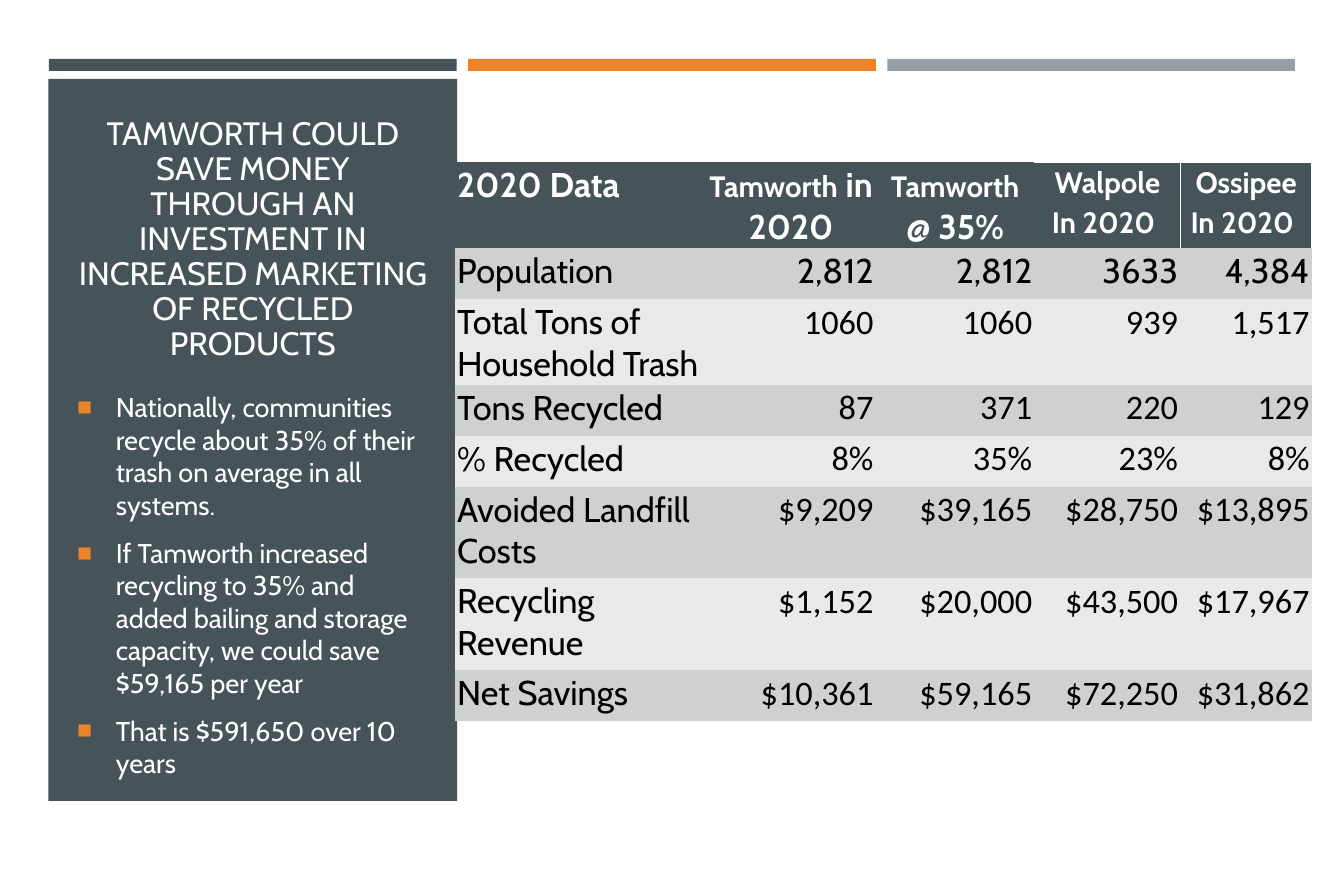
import pptx
import pptx.util
import pptx.dml.color
import pptx.enum.shapes
import pptx.enum.text
import pptx.oxml.ns
import lxml.etree

Pt = pptx.util.Pt
ALIGN = pptx.enum.text.PP_ALIGN
ANCHOR = pptx.enum.text.MSO_ANCHOR
DARK, ORANGE, GRAY, WHITE, BLACK = "465359", "ED8428", "969FA7", "FFFFFF", "000000"
BANDS = ("CFD1D1", "E9E9EA")

TITLE = ("TAMWORTH COULD SAVE MONEY THROUGH AN INVESTMENT IN "
         "INCREASED MARKETING OF RECYCLED PRODUCTS")
POINTS = [
    "Nationally, communities recycle about 35% of their trash on average in all systems.",
    "If Tamworth increased recycling to 35% and added bailing and storage capacity, "
    "we could save $59,165 per year",
    "That is $591,650 over 10 years",
]
# Each header cell is a list of paragraphs, each a list of (text, size)
HEADS = [
    [[("2020 Data", 21)]],
    [[("Tamworth", 18), (" in 2020", 21)]],
    [[("Tamworth", 18), (" @ 35%", 21)]],
    [[("Walpole", 18)], [("In 2020", 18), (" ", 21)]],
    [[("Ossipee", 18)], [("In 2020", 18), (" ", 21)]],
]
ROWS = [
    ("Population", "2,812", "2,812", "3633", "4,384"),
    ("Total Tons of Household Trash", "1060", "1060", "939", "1,517"),
    ("Tons Recycled", "87", "371", "220", "129"),
    ("% Recycled", "8%", "35%", "23%", "8%"),
    ("Avoided Landfill Costs", "$9,209", "$39,165", "$28,750", "$13,895"),
    ("Recycling Revenue", "$1,152", "$20,000", "$43,500", "$17,967"),
    ("Net Savings", "$10,361", "$59,165", "$72,250", "$31,862"),
]
WIDTHS = (154, 103.7, 97.2, 89.3, 80.6)
HEIGHTS = (52.5, 31.2, 52.5, 31.2, 31.2, 56.2, 56.2, 31.2)
PLAIN = "{2D5ABB26-0587-4C30-8999-92F81FD0307C}"  # table style without grid


def color(text):
    return pptx.dml.color.RGBColor.from_string(text)


def sub(node, tag, **attrs):
    return lxml.etree.SubElement(node, pptx.oxml.ns.qn(tag), attrs)


def style(run, size, tint, face="Cabin", bold=False):
    font = run.font
    font.size, font.name, font.bold = Pt(size), face, bold
    font.color.rgb = color(tint)


def block(slide, box, tint):
    shape = slide.shapes.add_shape(
        pptx.enum.shapes.MSO_SHAPE.RECTANGLE, *map(Pt, box))
    shape.shadow.inherit = False
    shape.fill.solid()
    shape.fill.fore_color.rgb = color(tint)
    shape.line.fill.background()


def bars(slide, box):
    left, top, width, height = box
    gap = 7
    part = (width - 2 * gap) / 3
    for i, tint in enumerate((DARK, ORANGE, GRAY)):
        block(slide, (left + i * (part + gap), top, part, height), tint)


def bullet(para):
    props = para._p.get_or_add_pPr()
    props.set("marL", str(Pt(23.8)))
    props.set("indent", str(-Pt(23.8)))
    sub(sub(props, "a:buClr"), "a:srgbClr", val=ORANGE)
    sub(props, "a:buSzPct", val="92000")
    sub(props, "a:buFont", typeface="Arial")
    sub(props, "a:buChar", char="■")


def panel(slide, box):
    left, top, width, height = box
    block(slide, box, DARK)

    # Title, raised above the panel
    title = slide.shapes.title
    title.element.getparent().append(title.element)
    title.left, title.top = Pt(left + 10), Pt(top + 1.5)
    title.width, title.height = Pt(width - 20), Pt(175.7)
    frame = title.text_frame
    frame.text = TITLE
    frame.word_wrap = True
    frame.auto_size = pptx.enum.text.MSO_AUTO_SIZE.NONE
    frame.vertical_anchor = ANCHOR.BOTTOM
    para = frame.paragraphs[0]
    para.alignment, para.line_spacing = ALIGN.CENTER, 0.9
    style(para.runs[0], 19.8, WHITE)

    # Bulleted points
    body = slide.shapes.add_textbox(
        Pt(left + 10.5), Pt(top + 195), Pt(width - 20), Pt(229.7))
    frame = body.text_frame
    frame.word_wrap = True
    frame.vertical_anchor = ANCHOR.MIDDLE
    frame.text = "\n".join(POINTS)
    for para in frame.paragraphs:
        para.space_before, para.space_after = Pt(3.3), Pt(6)
        bullet(para)
        style(para.runs[0], 16.6, WHITE)


def paint(cell, tint):
    cell.margin_left = cell.margin_right = cell.margin_top = Pt(1.4)
    cell.margin_bottom = 0
    cell.fill.solid()
    cell.fill.fore_color.rgb = color(tint)


def edge(cell, sides):
    props = cell._tc.get_or_add_tcPr()
    for i, side in enumerate(sides):
        line = lxml.etree.Element(pptx.oxml.ns.qn("a:ln" + side), w=str(Pt(1)))
        sub(sub(line, "a:solidFill"), "a:srgbClr", val=WHITE)
        props.insert(i, line)


def header(cell, paras, align):
    paint(cell, DARK)
    frame = cell.text_frame
    for i, parts in enumerate(paras):
        para = frame.add_paragraph() if i else frame.paragraphs[0]
        para.alignment = align
        for text, size in parts:
            run = para.add_run()
            run.text = text
            style(run, size, WHITE, bold=True)


def grid(slide, box):
    frame = slide.shapes.add_table(len(HEIGHTS), len(WIDTHS), *map(Pt, box))
    table = frame.table
    for mark in frame.element.iter(pptx.oxml.ns.qn("a:tableStyleId")):
        mark.text = PLAIN
    for col, width in zip(table.columns, WIDTHS):
        col.width = Pt(width)
    for row, height in zip(table.rows, HEIGHTS):
        row.height = Pt(height)

    # Header row
    for c, paras in enumerate(HEADS):
        header(table.cell(0, c), paras, ALIGN.CENTER if c else ALIGN.LEFT)
    edge(table.cell(0, 3), "RT")
    edge(table.cell(0, 4), "LRT")

    # Data rows
    for r, values in enumerate(ROWS):
        for c, value in enumerate(values):
            cell = table.cell(r + 1, c)
            paint(cell, BANDS[r % 2])
            cell.text_frame.text = value
            para = cell.text_frame.paragraphs[0]
            para.alignment = ALIGN.RIGHT if c else ALIGN.LEFT
            face = "Calibri" if r and c else "Cabin"
            style(para.runs[0], 21, BLACK, face)


def main():
    deck = pptx.Presentation()
    deck.slide_width, deck.slide_height = Pt(823), Pt(540)
    slide = deck.slides.add_slide(deck.slide_layouts[5])
    bars(slide, (30, 36, 763, 7.4))
    panel(slide, (29.6, 48.3, 250.4, 442))
    grid(slide, (278.6, 99.4, sum(WIDTHS), sum(HEIGHTS)))
    deck.save("out.pptx")


if __name__ == "__main__":
    main()
